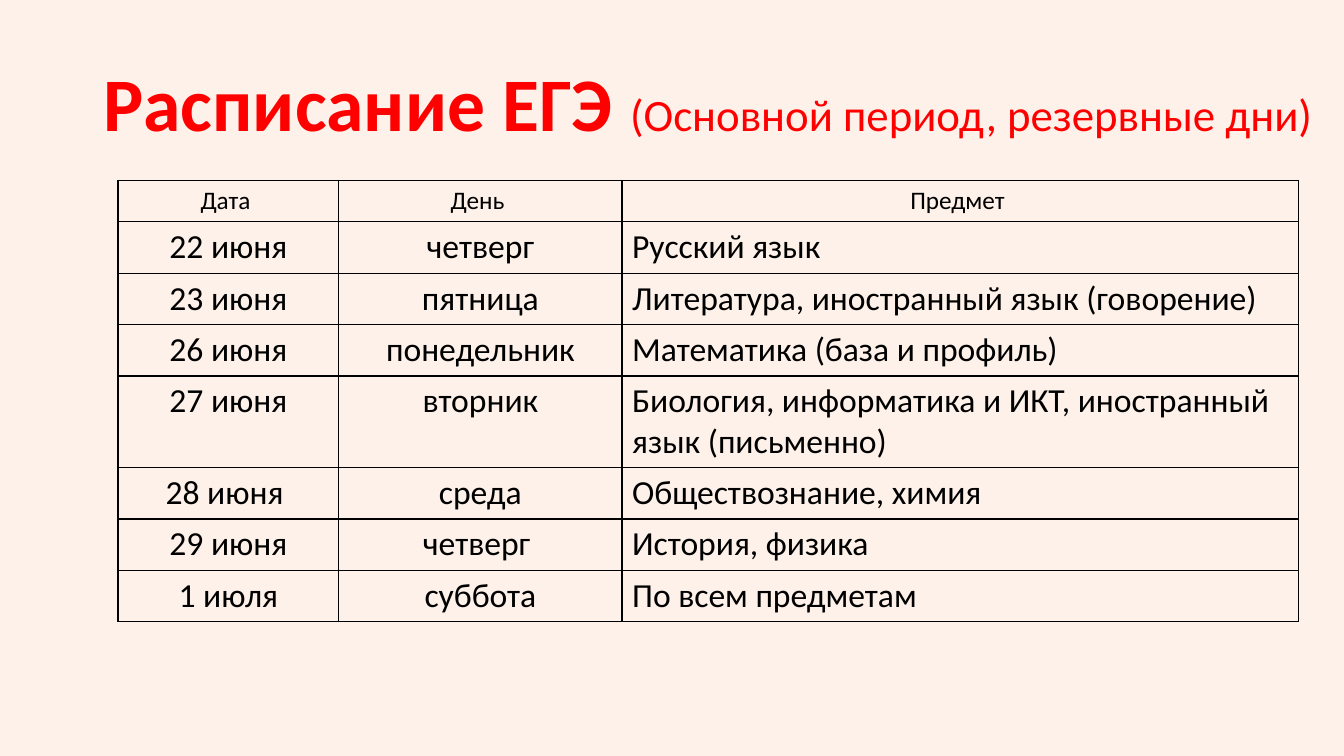
from lxml import etree
from pptx import Presentation
from pptx.dml.color import RGBColor
from pptx.enum.text import MSO_ANCHOR, PP_ALIGN
from pptx.oxml.ns import qn
from pptx.util import Inches, Pt

CENTER, LEFT = PP_ALIGN.CENTER, PP_ALIGN.LEFT
MIDDLE = MSO_ANCHOR.MIDDLE
FONT = "Calibri"
COLORS = {"background": "FDF1E9", "title": "FF0000", "text": "000000", "border": "000000"}

TITLE_BOX = (0.92, 0.34, 12.21, 1.45)
TITLE_SPANS = [
    ("Расписание ЕГЭ ", 54, True),
    ("(Основной период, резервные дни)", 32, False),
]

TABLE_BOX = (1.17, 1.79, 11.71, 4.38)
COLUMN_WIDTHS = [2.19, 2.81, 6.71]
HEADER_HEIGHT, LINE_HEIGHT, TWO_LINE_HEIGHT = 0.41, 0.51, 0.91
HEADER = ("Дата ", "День ", "Предмет ")
EXAMS = [
    ("22 июня", "четверг", "Русский язык"),
    ("23 июня", "пятница", "Литература, иностранный язык (говорение)"),
    ("26 июня", "понедельник", "Математика (база и профиль)"),
    ("27 июня", "вторник", "Биология, информатика и ИКТ, иностранный язык (письменно)"),
    ("28 июня ", "среда", "Обществознание, химия"),
    ("29 июня", "четверг ", "История, физика"),
    ("1 июля", "суббота", "По всем предметам"),
]
TWO_LINE_ROW = 4


def add_span(para, text, color, **formats):
    span = para.add_run()
    span.text = text
    span.font.color.rgb = RGBColor.from_string(COLORS[color])
    for name, value in {"name": FONT, **formats}.items():
        setattr(span.font, name, value)


def add_title(page, box):
    frame = page.shapes.add_textbox(*map(Inches, box)).text_frame
    frame.word_wrap = True
    frame.vertical_anchor = MIDDLE
    para = frame.paragraphs[0]
    para.alignment = CENTER
    para.line_spacing = 0.9
    for text, size, bold in TITLE_SPANS:
        add_span(para, text, "title", size=Pt(size), bold=bold)


def set_borders(cell):
    """Draw a thin line on all four sides, ahead of the cell's fill."""
    properties = cell._tc.get_or_add_tcPr()
    for index, side in enumerate(("a:lnL", "a:lnR", "a:lnT", "a:lnB")):
        line = etree.Element(qn(side), w=str(Pt(1)))
        fill = etree.SubElement(line, qn("a:solidFill"))
        etree.SubElement(fill, qn("a:srgbClr"), val=COLORS["border"])
        properties.insert(index, line)


def add_schedule(page, box):
    rows = [HEADER] + EXAMS
    table = page.shapes.add_table(len(rows), len(HEADER), *map(Inches, box)).table
    table.first_row = table.horz_banding = False
    for column, width in zip(table.columns, COLUMN_WIDTHS):
        column.width = Inches(width)
    heights = [HEADER_HEIGHT] + [LINE_HEIGHT] * len(EXAMS)
    heights[TWO_LINE_ROW] = TWO_LINE_HEIGHT
    for row_index, (texts, height) in enumerate(zip(rows, heights)):
        table.rows[row_index].height = Inches(height)
        is_header = row_index == 0
        for column_index, text in enumerate(texts):
            cell = table.cell(row_index, column_index)
            cell.fill.background()
            set_borders(cell)
            para = cell.text_frame.paragraphs[0]
            para.alignment = CENTER if is_header or column_index < 2 else LEFT
            add_span(para, text, "text", size=Pt(18 if is_header else 24), bold=False)


def main():
    deck = Presentation()
    deck.slide_width, deck.slide_height = Inches(13.33), Inches(7.5)
    page = deck.slides.add_slide(deck.slide_layouts[6])
    page.background.fill.solid()
    page.background.fill.fore_color.rgb = RGBColor.from_string(COLORS["background"])
    add_title(page, TITLE_BOX)
    add_schedule(page, TABLE_BOX)
    deck.save("out.pptx")


if __name__ == "__main__":
    main()
